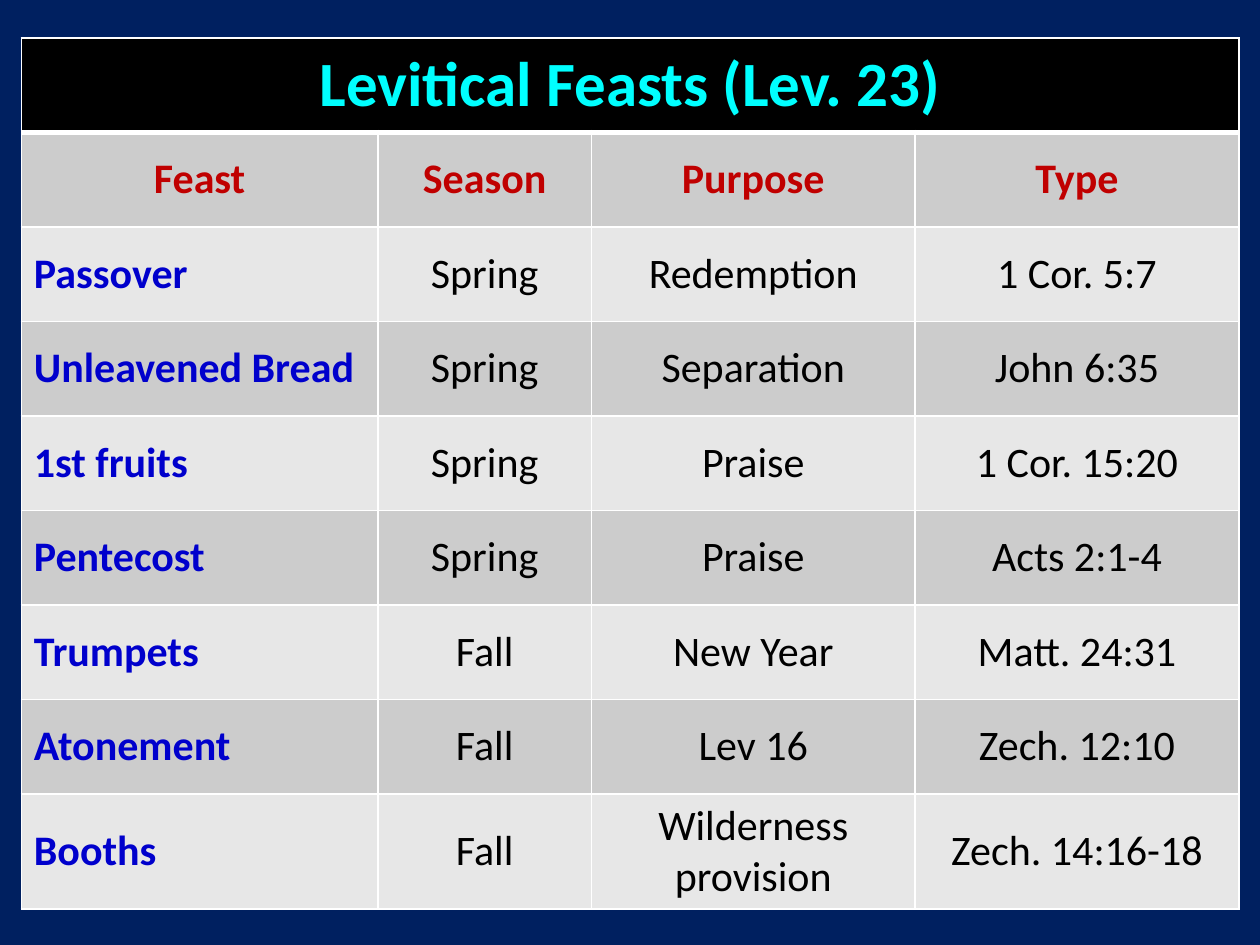
import pptx
import pptx.util
import pptx.dml.color
import pptx.enum.text
import pptx.oxml
import pptx.oxml.ns

Pt = pptx.util.Pt
RGB = pptx.dml.color.RGBColor.from_string
ALIGN = pptx.enum.text.PP_ALIGN
MIDDLE = pptx.enum.text.MSO_ANCHOR.MIDDLE

HEX = {
    "navy": "002060", "black": "000000", "white": "FFFFFF", "cyan": "00FFFF",
    "red": "C00000", "blue": "0000CC", "dark": "CCCCCC", "light": "E7E7E7",
}
FORMS = {
    "title": {"size": Pt(36), "bold": True, "color": "cyan"},
    "head": {"size": Pt(24), "bold": True, "color": "red"},
    "feast": {"size": Pt(24), "bold": True, "color": "blue"},
    "body": {"size": Pt(24), "bold": False, "color": "black"},
}
ROWS = [
    ("Levitical Feasts (Lev. 23)", "", "", ""),
    ("Feast", "Season", "Purpose", "Type"),
    ("Passover", "Spring", "Redemption", "1 Cor. 5:7"),
    ("Unleavened Bread", "Spring", "Separation", "John 6:35"),
    ("1st fruits", "Spring", "Praise", "1 Cor. 15:20"),
    ("Pentecost", "Spring", "Praise", "Acts 2:1-4"),
    ("Trumpets", "Fall", "New Year", "Matt. 24:31"),
    ("Atonement", "Fall", "Lev 16", "Zech. 12:10"),
    ("Booths", "Fall", "Wilderness provision", "Zech. 14:16-18"),
]
WIDTHS = [203.8, 122, 185, 185]
HEIGHT = 54


def fill_cell(cell, text, form, shade, align):
    """Write and format one table cell."""
    cell.fill.solid()
    cell.fill.fore_color.rgb = RGB(HEX[shade])
    cell.vertical_anchor = MIDDLE
    if not text:
        return
    para = cell.text_frame.paragraphs[0]
    para.alignment = align
    run = para.add_run()
    run.text = text
    run.font.name = "Calibri"
    for key, value in FORMS[form].items():
        if key == "color":
            run.font.color.rgb = RGB(HEX[value])
        else:
            setattr(run.font, key, value)


def edge_cell(cell, widths):
    """Draw white borders; widths run left, right, top, bottom."""
    props = cell._tc.get_or_add_tcPr()
    for spot, (side, width) in enumerate(zip("LRTB", widths)):
        line = pptx.oxml.parse_xml(
            f'<a:ln{side} {pptx.oxml.ns.nsdecls("a")} w="{Pt(width)}">'
            f'<a:solidFill><a:srgbClr val="{HEX["white"]}"/></a:solidFill>'
            f'</a:ln{side}>')
        props.insert(spot, line)


# Slide and background
deck = pptx.Presentation()
deck.slide_width, deck.slide_height = Pt(720), Pt(540)
slide = deck.slides.add_slide(deck.slide_layouts[6])
slide.background.fill.solid()
slide.background.fill.fore_color.rgb = RGB(HEX["navy"])

# Table grid
frame = slide.shapes.add_table(
    len(ROWS), len(WIDTHS), Pt(12.2), Pt(21.6),
    Pt(sum(WIDTHS)), Pt(HEIGHT * len(ROWS)))
table = frame.table
for col, width in zip(table.columns, WIDTHS):
    col.width = Pt(width)
for row in table.rows:
    row.height = Pt(HEIGHT)
table.cell(0, 0).merge(table.cell(0, len(WIDTHS) - 1))

# Cells: title, column heads, then one feast a row
for r, texts in enumerate(ROWS):
    for c, text in enumerate(texts):
        form = "title" if r == 0 else "head" if r == 1 else "body" if c else "feast"
        shade = "black" if r == 0 else "dark" if r % 2 else "light"
        align = ALIGN.LEFT if form == "feast" else ALIGN.CENTER
        cell = table.cell(r, c)
        fill_cell(cell, text, form, shade, align)
        edge_cell(cell, (1, 1, 3 if r == 1 else 1, 3 if r == 0 else 1))

deck.save("out.pptx")
